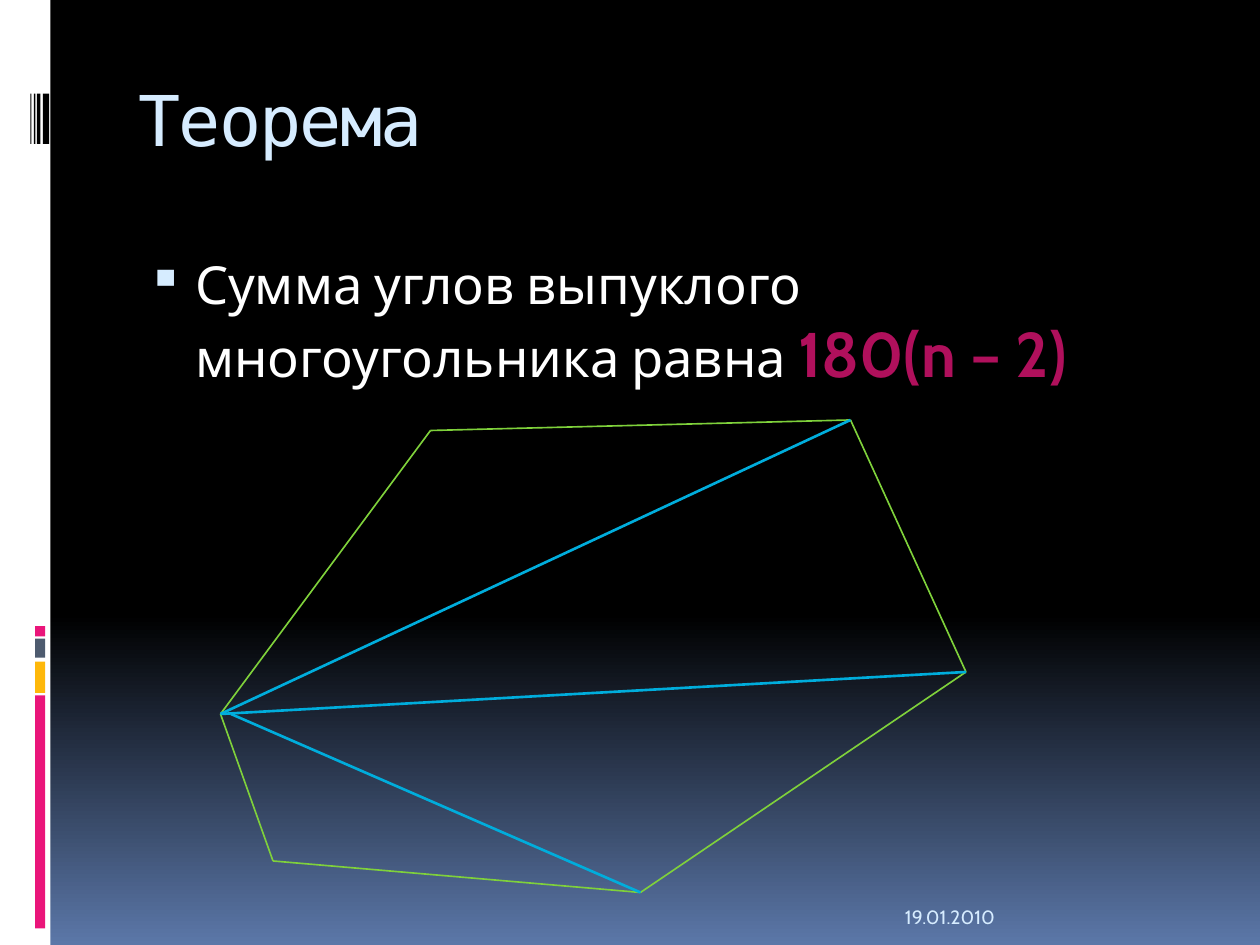
from copy import deepcopy

from lxml import etree
from pptx import Presentation
from pptx import util as u
from pptx.dml.color import RGBColor
from pptx.enum import shapes, text
from pptx.oxml import ns

Pt = u.Pt
WHITE = RGBColor(0xFF, 0xFF, 0xFF)
BLACK = RGBColor(0, 0, 0)
STEEL = RGBColor(0x5B, 0x77, 0xA8)
PINK = RGBColor(0xEA, 0x15, 0x7A)
AMBER = RGBColor(0xFE, 0xB8, 0x0A)
SLATE = RGBColor(0x4E, 0x5B, 0x6F)
ICE = RGBColor(0xD6, 0xEC, 0xFF)
CRIMSON = RGBColor(0xB0, 0x10, 0x5C)
GREEN = RGBColor(0x7F, 0xD1, 0x3B)
CYAN = RGBColor(0x00, 0xAD, 0xDC)

TITLE = {"size": Pt(40), "name": "DejaVu Sans Mono"}
BODY = {"size": Pt(30), "name": "Cabin"}
FORMULA = {"size": Pt(36), "name": "Cabin", "bold": True}
DATE = {"size": Pt(11), "name": "Cabin"}


def add_background(s):
    fill = s.background.fill
    fill.gradient()
    fill.gradient_angle = 270
    stops = fill.gradient_stops
    first = stops[0]._gs
    first.addnext(deepcopy(first))
    for stop, pos, color in zip(fill.gradient_stops, (0, 0.65, 1),
                                (BLACK, BLACK, STEEL)):
        stop.color.rgb = color
        stop.position = pos


def add_bar(s, box, color):
    sp = s.shapes.add_shape(shapes.MSO_SHAPE.RECTANGLE, *map(Pt, box))
    sp.shadow.inherit = False
    sp.fill.solid()
    sp.fill.fore_color.rgb = color
    sp.line.fill.background()


def add_sidebar(s, box):
    x, y, w, h = box
    add_bar(s, box, WHITE)
    for top, height, color in ((397.4, 133.2, PINK), (378, 18, AMBER),
                               (365, 10.8, SLATE), (357.8, 5.8, PINK)):
        add_bar(s, (x + 20, y + top, 5.8, height), color)
    for left, width in ((24.5, 3.6), (21.1, 2), (19.4, 0.9), (17.3, 0.7)):
        add_bar(s, (x + left, y + 53.5, width, 28.8), BLACK)


def add_text(s, box, runs, anchor=text.MSO_ANCHOR.TOP):
    tf = s.shapes.add_textbox(*map(Pt, box)).text_frame
    tf.word_wrap = True
    tf.vertical_anchor = anchor
    p = tf.paragraphs[0]
    for words, color, formats in runs:
        r = p.add_run()
        r.text = words
        r.font.color.rgb = color
        for key, value in formats.items():
            setattr(r.font, key, value)
    return p


def add_title(s, box):
    p = add_text(s, box, [("Теорема", ICE, TITLE)])
    p.runs[0].font._element.set("spc", "-100")


def add_theorem(s, box):
    p = add_text(s, box, [
        ("Сумма углов выпуклого многоугольника равна ", WHITE, BODY),
        ("180(n – 2)", CRIMSON, FORMULA),
    ])
    p.space_before = Pt(7)
    pPr = p._p.get_or_add_pPr()
    pPr.set("marL", str(Pt(32.4)))
    pPr.set("indent", str(Pt(-27.4)))
    color = etree.SubElement(pPr, ns.qn("a:buClr"))
    etree.SubElement(color, ns.qn("a:srgbClr"), val=str(ICE))
    etree.SubElement(pPr, ns.qn("a:buSzPct"), val="95000")
    etree.SubElement(pPr, ns.qn("a:buChar"), char="▪")


def add_date(s, box):
    add_text(s, box, [("19.01.2010", ICE, DATE)], text.MSO_ANCHOR.BOTTOM)


def add_line(s, start, end, color, width):
    c = s.shapes.add_connector(shapes.MSO_CONNECTOR.STRAIGHT,
                               *map(Pt, (*start, *end)))
    c.line.color.rgb = color
    c.line.width = Pt(width)
    etree.SubElement(c._element.spPr, ns.qn("a:effectLst"))


def add_polygon(s, box):
    x, y, w, h = box
    hexagon = [(x, y + 168), (x + 120, y + 6), (x + 360, y),
               (x + w, y + 144), (x + 240, y + h), (x + 30, y + 252)]
    apex, _, top, right, bottom, _ = hexagon
    for start, end in zip(hexagon, hexagon[1:] + hexagon[:1]):
        add_line(s, start, end, GREEN, 0.94)
    near_apex = (apex[0] + 6, apex[1])
    for start, end in ((near_apex, bottom), (apex, top), (apex, right)):
        add_line(s, start, end, CYAN, 1.5)


def main():
    prs = Presentation()
    prs.slide_width, prs.slide_height = Pt(720), Pt(540)
    s = prs.slides.add_slide(prs.slide_layouts[6])
    add_background(s)
    add_sidebar(s, (0, 0, 28.8, 540))
    add_title(s, (72, 40.3, 612, 72))
    add_theorem(s, (72, 140.4, 612, 360))
    add_date(s, (510, 505.5, 168, 28.8))
    add_polygon(s, (126, 240, 426, 270))
    prs.save("out.pptx")


if __name__ == "__main__":
    main()
